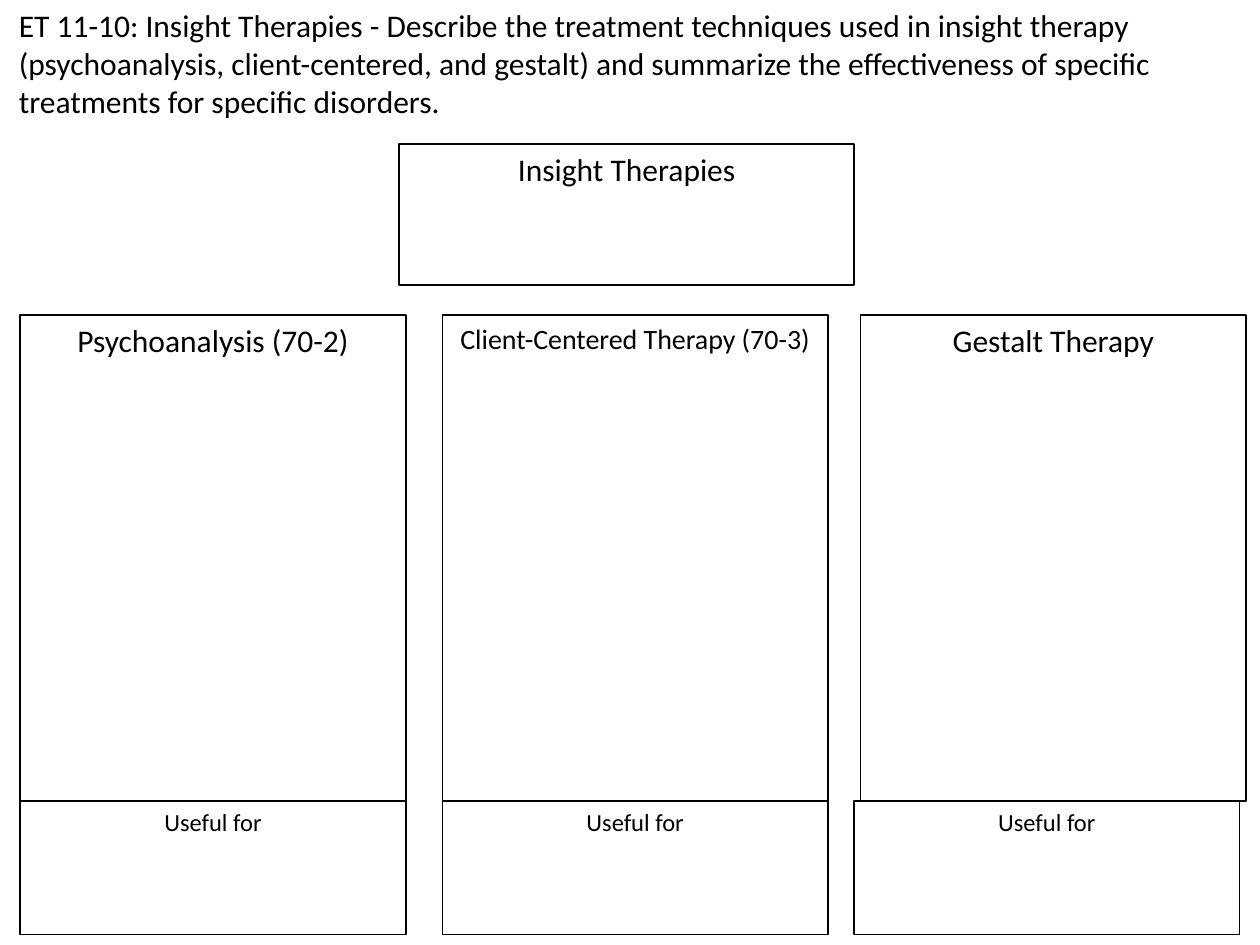
import pptx
import pptx.dml.color
import pptx.enum.shapes
import pptx.enum.text
import pptx.util

Cm = pptx.util.Cm
Pt = pptx.util.Pt
Align = pptx.enum.text.PP_ALIGN
COLORS = {"ink": "000000", "paper": "FFFFFF"}


def color(name):
    return pptx.dml.color.RGBColor.from_string(COLORS[name])


def write(frame, text, size=18, align=Align.LEFT, ink="ink"):
    frame.word_wrap = True
    frame.vertical_anchor = pptx.enum.text.MSO_ANCHOR.TOP
    para = frame.paragraphs[0]
    para.alignment = align
    run = para.add_run()
    run.text = text
    run.font.name = "Calibri"
    run.font.size = Pt(size)
    run.font.color.rgb = color(ink)


def add_title(slide, text):
    box = slide.shapes.add_textbox(Cm(0.13), Cm(0), Cm(25.07), Cm(2.57))
    write(box.text_frame, text)
    box.text_frame.auto_size = pptx.enum.text.MSO_AUTO_SIZE.SHAPE_TO_FIT_TEXT


def add_box(slide, text, left, top, width, height, size=18):
    kind = pptx.enum.shapes.MSO_SHAPE.RECTANGLE
    box = slide.shapes.add_shape(kind, Cm(left), Cm(top), Cm(width), Cm(height))
    box.shadow.inherit = False
    box.fill.solid()
    box.fill.fore_color.rgb = color("paper")
    box.line.color.rgb = color("ink")
    box.line.width = Pt(1)
    write(box.text_frame, text, size=size, align=Align.CENTER)


def main():
    deck = pptx.Presentation()
    deck.slide_width, deck.slide_height = Cm(25.4), Cm(19.05)
    slide = deck.slides.add_slide(deck.slide_layouts[6])

    add_title(
        slide,
        "ET 11-10: Insight Therapies - Describe the treatment techniques used in "
        "insight therapy (psychoanalysis, client-centered, and gestalt) and "
        "summarize the effectiveness of specific treatments for specific disorders.",
    )
    add_box(slide, "Insight Therapies", 8.05, 2.9, 9.17, 2.84)

    width, top, height = 7.77, 6.35, 9.8
    columns = [
        ("Psychoanalysis (70-2)", 18, 0.41, 0.41),
        ("Client-Centered Therapy (70-3)", 16, 8.92, 8.92),
        ("Gestalt Therapy", 18, 17.35, 17.22),
    ]
    for name, size, left, foot in columns:
        add_box(slide, name, left, top, width, height, size=size)
        add_box(slide, "Useful for", foot, top + height, width, 2.69, size=14)

    deck.save("out.pptx")


if __name__ == "__main__":
    main()
